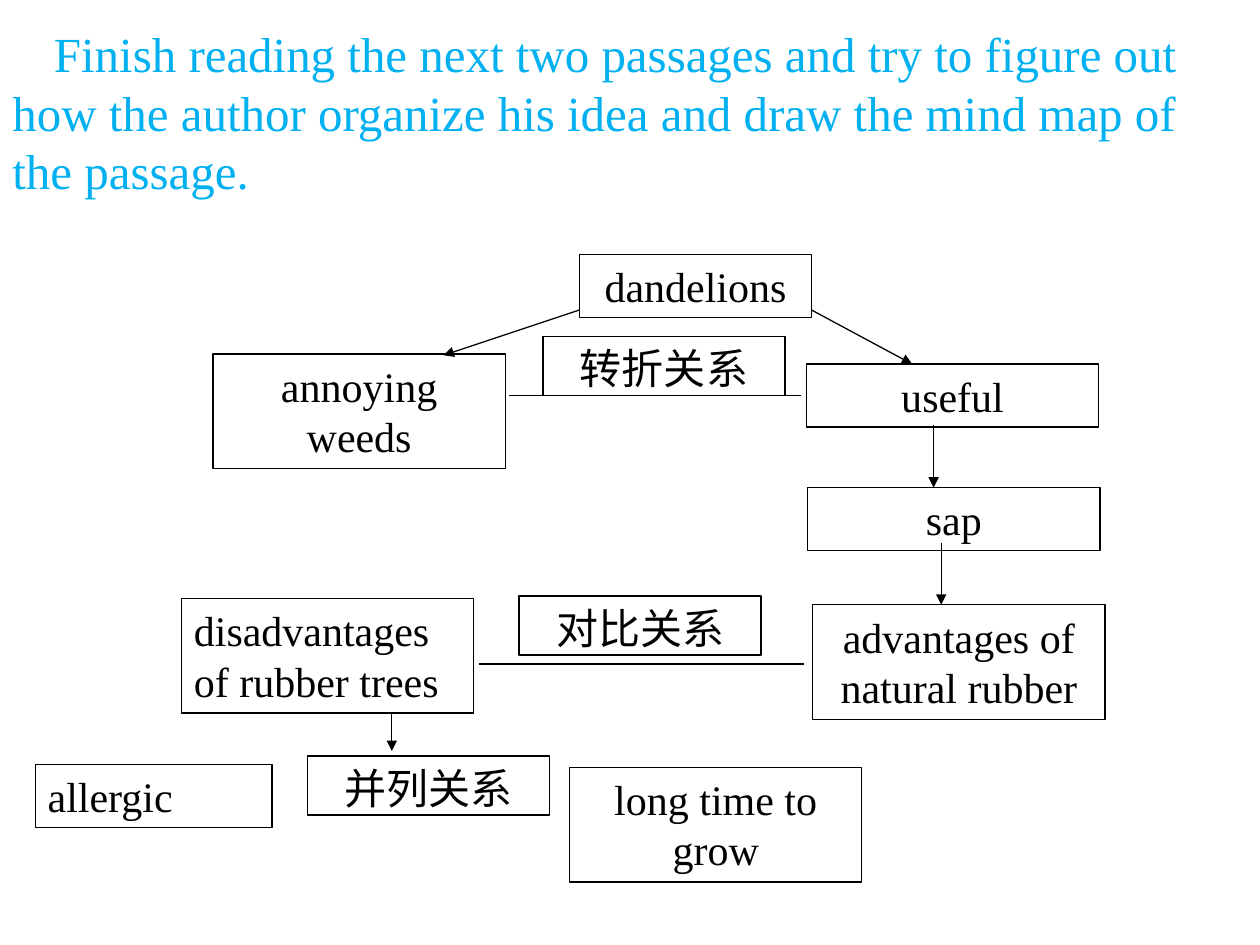
from lxml import etree
from pptx import Presentation
from pptx.dml.color import RGBColor
from pptx.enum.shapes import MSO_CONNECTOR as Connector, MSO_SHAPE as Shape
from pptx.enum.text import MSO_ANCHOR as Anchor, MSO_AUTO_SIZE as AutoSize, PP_ALIGN as Align
from pptx.oxml.ns import qn
from pptx.util import Inches, Pt


def write(box, text, size, color, align, anchor):
    frame = box.text_frame
    for name, value in {"word_wrap": True, "vertical_anchor": anchor}.items():
        setattr(frame, name, value)
    paragraph = frame.paragraphs[0]
    paragraph.alignment = align
    run = paragraph.add_run()
    run.text = text
    for name, value in {"name": "Times New Roman", "size": Pt(size)}.items():
        setattr(run.font, name, value)
    run.font.color.rgb = RGBColor.from_string(color)
    return paragraph


def link(start, end, arrow):
    line = slide.shapes.add_connector(
        Connector.STRAIGHT, *(Inches(v) for v in (*start, *end)))
    line.line.color.rgb = RGBColor.from_string(BLACK)
    line.line.width = Pt(0.75)
    if arrow:
        etree.SubElement(line.line._get_or_add_ln(), qn("a:tailEnd"), type="triangle")
    etree.SubElement(line._element.spPr, qn("a:effectLst"))


BLACK, WHITE, SKY = "000000", "FFFFFF", "00B0F0"
ONE_LINE, TWO_LINES, RELATION = 0.5, 0.91, 0.47

prs = Presentation()
prs.slide_width, prs.slide_height = Inches(10), Inches(7.5)
slide = prs.slides.add_slide(prs.slide_layouts[6])

task = slide.shapes.add_textbox(Inches(0), Inches(0.13), Inches(9.88), Inches(1.51))
task_paragraph = write(
    task,
    "Finish reading the next two passages and try to figure out how the author "
    "organize his idea and draw the mind map of the passage.",
    28, SKY, Align.LEFT, Anchor.MIDDLE)
task_paragraph._p.get_or_add_pPr().set("indent", str(Inches(0.33)))
task.text_frame.auto_size = AutoSize.SHAPE_TO_FIT_TEXT

# Links that run behind the boxes
for start, end, arrow in [
    ((4.04, 3.14), (6.36, 3.14), False),
    ((3.8, 5.27), (6.38, 5.27), False),
    ((3.11, 5.43), (3.11, 5.96), True),
]:
    link(start, end, arrow)

for text, left, top, width, height, align in [
    ("转折关系", 4.31, 2.67, 1.92, RELATION, Align.CENTER),
    ("对比关系", 4.12, 4.73, 1.92, RELATION, Align.CENTER),
    ("并列关系", 2.44, 6, 1.92, RELATION, Align.CENTER),
    ("dandelions", 4.6, 2.02, 1.84, ONE_LINE, Align.CENTER),
    ("annoying weeds", 1.69, 2.81, 2.32, TWO_LINES, Align.CENTER),
    ("useful", 6.4, 2.89, 2.32, ONE_LINE, Align.CENTER),
    ("sap", 6.41, 3.87, 2.32, ONE_LINE, Align.CENTER),
    ("disadvantages of rubber trees", 1.44, 4.75, 2.32, TWO_LINES, Align.JUSTIFY),
    ("advantages of natural rubber", 6.45, 4.8, 2.32, TWO_LINES, Align.CENTER),
    ("long time to grow", 4.52, 6.09, 2.32, TWO_LINES, Align.CENTER),
    ("allergic", 0.28, 6.07, 1.88, ONE_LINE, Align.JUSTIFY),
]:
    idea = slide.shapes.add_shape(
        Shape.RECTANGLE, *(Inches(v) for v in (left, top, width, height)))
    idea.shadow.inherit = False
    idea.fill.solid()
    idea.fill.fore_color.rgb = RGBColor.from_string(WHITE)
    idea.line.color.rgb = RGBColor.from_string(BLACK)
    idea.line.width = Pt(0.75)
    write(idea, text, 24, BLACK, align, Anchor.TOP)
    if height != RELATION:
        idea.text_frame.auto_size = AutoSize.SHAPE_TO_FIT_TEXT

# Arrows in front of the boxes
for start, end in [
    ((4.6, 2.46), (3.52, 2.82)),
    ((6.44, 2.46), (7.24, 2.89)),
    ((7.41, 3.37), (7.41, 3.87)),
    ((7.47, 4.31), (7.47, 4.8)),
]:
    link(start, end, True)

prs.save("out.pptx")
